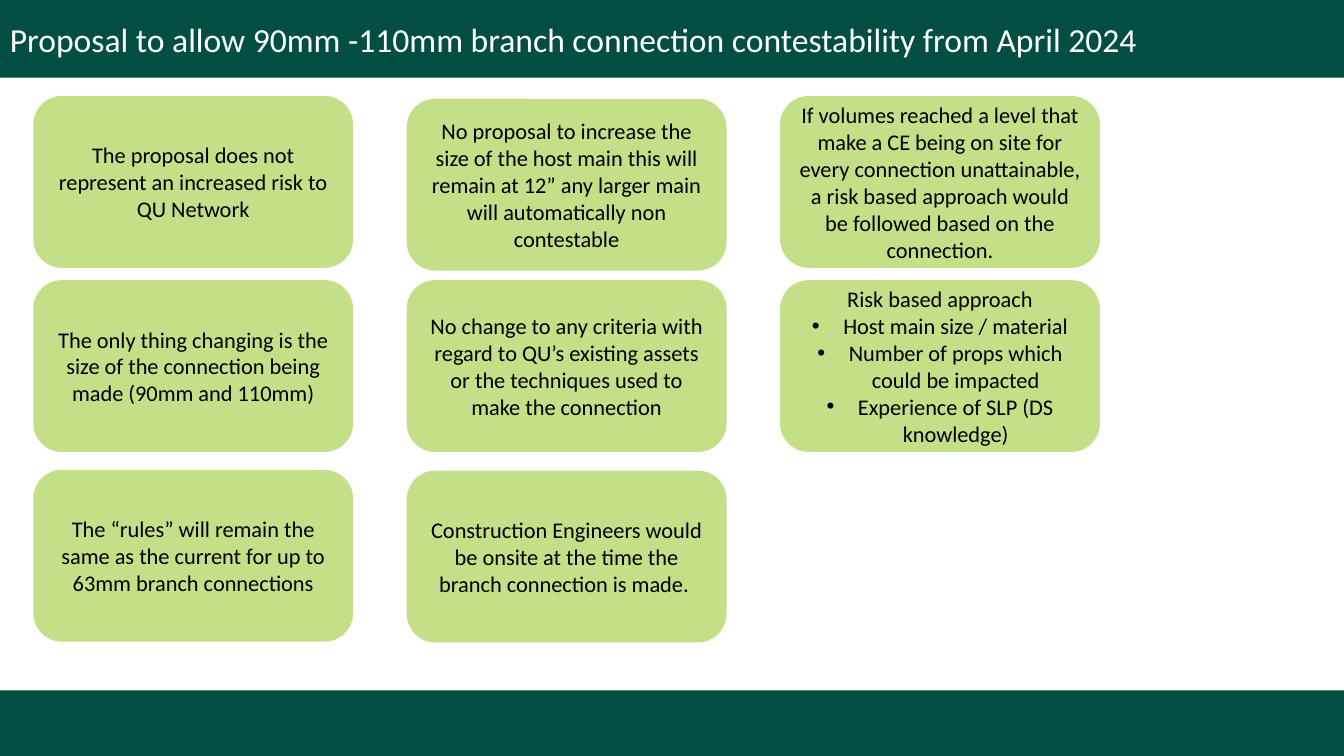
from dataclasses import dataclass

from lxml import etree
from pptx import Presentation
from pptx import util as u
from pptx.dml.color import RGBColor
from pptx.enum import shapes, text
from pptx.oxml import ns

DARK_GREEN = RGBColor(0x02, 0x4E, 0x43)
LIGHT_GREEN = RGBColor(0xC3, 0xE0, 0x88)
WHITE = RGBColor(0xFF, 0xFF, 0xFF)
BLACK = RGBColor(0x00, 0x00, 0x00)
FONT = "Calibri"

SLIDE_WIDTH, SLIDE_HEIGHT = u.Cm(33.87), u.Cm(19.05)
HEADER_HEIGHT, FOOTER_HEIGHT = u.Cm(1.96), u.Cm(1.65)
CARD_WIDTH, CARD_HEIGHT = u.Cm(8.06), u.Cm(4.33)
FIRST_COLUMN, COLUMN_PITCH = u.Cm(0.84), u.Cm(9.41)
ROW_TOPS = (u.Cm(2.42), u.Cm(7.06), u.Cm(11.84))
BULLET_INDENT = u.Cm(0.79)


@dataclass(frozen=True)
class Card:
    column: int
    row: int
    statement: str
    bullets: tuple[str, ...] = ()
    drop: float = 0  # centimetres below the top of the row


CARDS = (
    Card(0, 0, "The proposal does not represent an increased risk to QU Network"),
    Card(0, 1, "The only thing changing is the size of the connection being made "
               "(90mm and 110mm)"),
    Card(0, 2, "The “rules” will remain the same as the current for up to 63mm "
               "branch connections"),
    Card(1, 0, "No proposal to increase the size of the host main this will remain "
               "at 12” any larger main will automatically non contestable", drop=0.07),
    Card(1, 1, "No change to any criteria with regard to QU’s existing assets or the "
               "techniques used to make the connection"),
    Card(1, 2, "Construction Engineers would be onsite at the time the branch "
               "connection is made. ", drop=0.02),
    Card(2, 0, "If volumes reached a level that make a CE being on site for every "
               "connection unattainable, a risk based approach would be followed "
               "based on the connection."),
    Card(2, 1, "Risk based approach",
         bullets=("Host main size / material",
                  "Number of props which could be impacted",
                  "Experience of SLP (DS knowledge)")),
)


def add_panel(slide, preset, left: int, top: int, width: int, height: int,
              colour: RGBColor):
    """Add a flat, borderless shape whose text is centred vertically."""
    panel = slide.shapes.add_shape(preset, left, top, width, height)
    panel.shadow.inherit = False
    panel.fill.solid()
    panel.fill.fore_color.rgb = colour
    panel.line.fill.background()
    panel.text_frame.word_wrap = True
    panel.text_frame.vertical_anchor = text.MSO_ANCHOR.MIDDLE
    return panel


def write(paragraph, wording: str, size: int, colour: RGBColor, alignment) -> None:
    paragraph.alignment = alignment
    run = paragraph.add_run()
    run.text = wording
    run.font.name = FONT
    run.font.size = u.Pt(size)
    run.font.color.rgb = colour


def add_bullet(paragraph) -> None:
    properties = paragraph._p.get_or_add_pPr()
    properties.set("marL", str(BULLET_INDENT))
    properties.set("indent", str(-BULLET_INDENT))
    etree.SubElement(properties, ns.qn("a:buFont"), typeface="Arial")
    etree.SubElement(properties, ns.qn("a:buChar"), char="•")


def add_card(slide, card: Card) -> None:
    panel = add_panel(slide, shapes.MSO_SHAPE.ROUNDED_RECTANGLE,
                      FIRST_COLUMN + card.column * COLUMN_PITCH,
                      ROW_TOPS[card.row] + u.Cm(card.drop),
                      CARD_WIDTH, CARD_HEIGHT, LIGHT_GREEN)
    frame = panel.text_frame
    write(frame.paragraphs[0], card.statement, 16, BLACK, text.PP_ALIGN.CENTER)
    for bullet in card.bullets:
        paragraph = frame.add_paragraph()
        write(paragraph, bullet, 16, BLACK, text.PP_ALIGN.CENTER)
        add_bullet(paragraph)


def main() -> None:
    deck = Presentation()
    deck.slide_width, deck.slide_height = SLIDE_WIDTH, SLIDE_HEIGHT
    slide = deck.slides.add_slide(deck.slide_layouts[6])

    add_panel(slide, shapes.MSO_SHAPE.RECTANGLE, 0, SLIDE_HEIGHT - FOOTER_HEIGHT,
              SLIDE_WIDTH, FOOTER_HEIGHT, DARK_GREEN)
    header = add_panel(slide, shapes.MSO_SHAPE.RECTANGLE, 0, 0,
                       SLIDE_WIDTH, HEADER_HEIGHT, DARK_GREEN)
    write(header.text_frame.paragraphs[0],
          "Proposal to allow 90mm -110mm branch connection contestability "
          "from April 2024", 24, WHITE, text.PP_ALIGN.LEFT)
    for card in CARDS:
        add_card(slide, card)

    deck.save("out.pptx")


if __name__ == "__main__":
    main()
